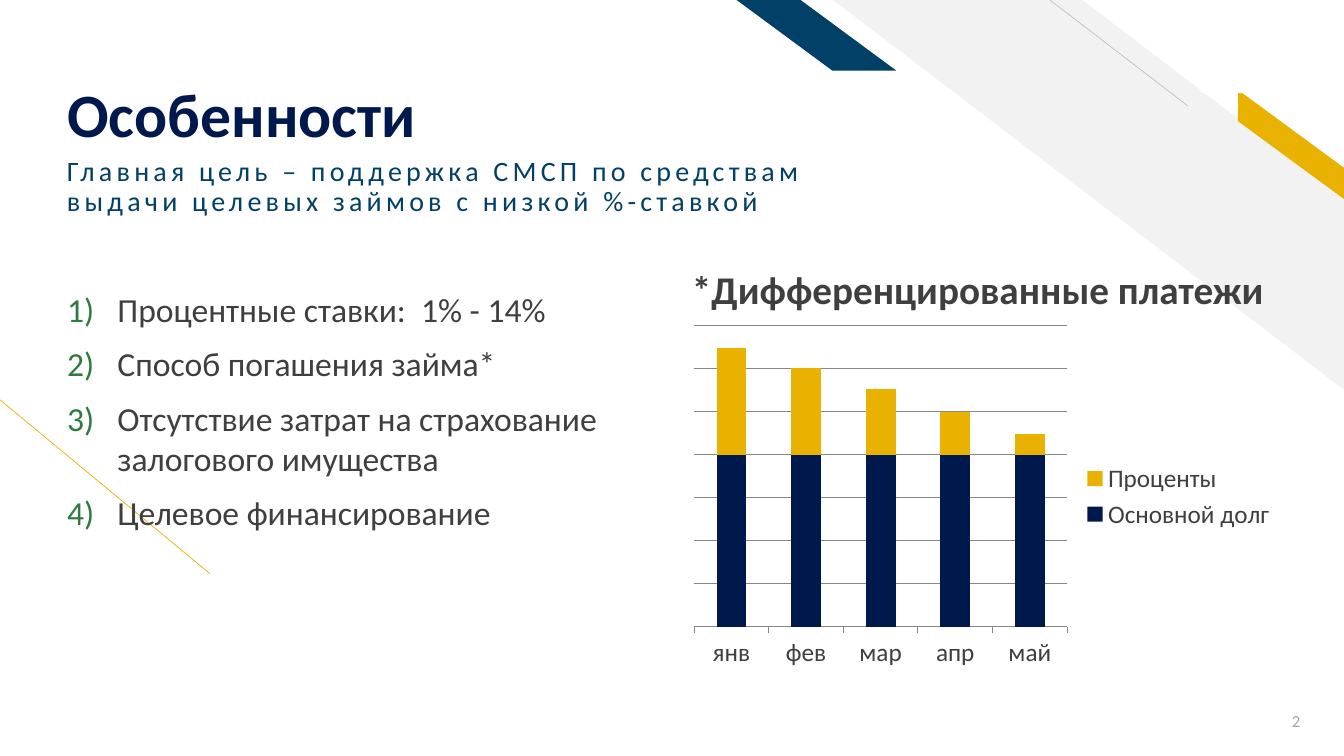
from lxml import etree
from pptx import Presentation
from pptx.chart.data import CategoryChartData
from pptx.dml.color import RGBColor
from pptx.enum.chart import XL_CHART_TYPE, XL_LEGEND_POSITION, XL_TICK_LABEL_POSITION, XL_TICK_MARK
from pptx.enum.shapes import MSO_CONNECTOR, MSO_SHAPE
from pptx.enum.text import MSO_ANCHOR, MSO_AUTO_SIZE, PP_ALIGN
from pptx.oxml.ns import qn
from pptx.util import Inches, Pt

STACKED = XL_CHART_TYPE.COLUMN_STACKED
LEGEND_RIGHT = XL_LEGEND_POSITION.RIGHT
NO_LABELS = XL_TICK_LABEL_POSITION.NONE
TICK_OUTSIDE = XL_TICK_MARK.OUTSIDE
STRAIGHT = MSO_CONNECTOR.STRAIGHT
STRIPE = MSO_SHAPE.DIAGONAL_STRIPE
PARALLELOGRAM = MSO_SHAPE.PARALLELOGRAM
RECTANGLE = MSO_SHAPE.RECTANGLE
TOP, MIDDLE, BOTTOM = MSO_ANCHOR.TOP, MSO_ANCHOR.MIDDLE, MSO_ANCHOR.BOTTOM
LEFT, RIGHT = PP_ALIGN.LEFT, PP_ALIGN.RIGHT

NAVY = RGBColor(0x00, 0x19, 0x4C)
BLUE = RGBColor(0x01, 0x40, 0x67)
GOLD = RGBColor(0xEA, 0xB2, 0x00)
GREEN = RGBColor(0x2E, 0x7A, 0x40)
TEXT = RGBColor(0x3F, 0x3F, 0x3F)
PALE = RGBColor(0xF2, 0xF2, 0xF2)
SILVER = RGBColor(0xBF, 0xBF, 0xBF)
GREY = RGBColor(0xA5, 0xA5, 0xA5)
GRID = RGBColor(0x87, 0x87, 0x87)
WHITE = RGBColor(0xFF, 0xFF, 0xFF)

COLUMNS, ROWS = 160, 90
CELL = Inches(1 / 12)
LEFT_COLUMN, RIGHT_COLUMN, BODY_WIDTH = 6.8, 81.2, 71.9


def cells(*counts):
    return [round(count * CELL) for count in counts]


def write(shape, lines, size, color, bold=False, anchor=TOP, align=LEFT, spacing=1.0, before=0):
    frame = shape.text_frame
    frame.word_wrap = True
    frame.auto_size = MSO_AUTO_SIZE.NONE
    frame.vertical_anchor = anchor
    for index, line in enumerate(lines):
        paragraph = frame.add_paragraph() if index else frame.paragraphs[0]
        paragraph.alignment = align
        paragraph.line_spacing = spacing
        paragraph.space_before = Pt(before)
        run = paragraph.add_run()
        run.text = line
        run.font.name = "Calibri"
        run.font.size = Pt(size)
        run.font.bold = bold
        run.font.color.rgb = color
    return frame


presentation = Presentation()
presentation.slide_width, presentation.slide_height = cells(COLUMNS, ROWS)
slide = presentation.slides.add_slide(presentation.slide_layouts[5])
shapes = slide.shapes

decorations = [
    (STRIPE, (99.2, 0, 60.8, 46.4), [0.512], 0, PALE),
    (PARALLELOGRAM, (144.8, 15.7, 17.8, 3), [0.72], 36.3, GOLD),
    (PARALLELOGRAM, (87.7, 0, 19, 8.4), [1.356], 0, BLUE),
    (RECTANGLE, (143, 2.6, 17, 8.5), [], 0, WHITE),
]
for kind, box, slants, rotation, color in decorations:
    shape = shapes.add_shape(kind, *cells(*box))
    for index, slant in enumerate(slants):
        shape.adjustments[index] = slant
    shape.rotation = rotation
    shape.element.spPr.find(qn("a:xfrm")).set("flipH", "1")
    shape.shadow.inherit = False
    shape.fill.solid()
    shape.fill.fore_color.rgb = color
    shape.line.fill.background()

for ends, color in [((25, 68.3, 0, 47.6), GOLD), ((141.4, 12.6, 125, 0), SILVER)]:
    line = shapes.add_connector(STRAIGHT, *cells(*ends))
    line.line.color.rgb = color
    line.line.width = Pt(0.5)
    etree.SubElement(line.element.spPr, qn("a:effectLst"))

title = shapes.title
title.left, title.top, title.width, title.height = cells(LEFT_COLUMN, 2.8, 109.3, 15.1)
title_frame = write(title, ["Особенности"], 44, NAVY, bold=True, anchor=BOTTOM, spacing=0.9)
title_frame.margin_bottom = 0

subtitle = shapes.add_textbox(*cells(LEFT_COLUMN, 18.1, 96.7, 8))
subtitle_frame = write(
    subtitle,
    ["Главная цель – поддержка СМСП по средствам выдачи целевых займов с низкой %-ставкой"],
    20, BLUE, spacing=0.9, before=10)
subtitle_frame.paragraphs[0].runs[0].font._element.set("spc", "300")

features = shapes.add_textbox(*cells(LEFT_COLUMN, 33.8, BODY_WIDTH, 46.4))
feature_frame = write(features, [
    "Процентные ставки:  1% - 14%",
    "Способ погашения займа*",
    "Отсутствие затрат на страхование залогового имущества",
    "Целевое финансирование",
], 24, TEXT, before=10)
for paragraph in feature_frame.paragraphs:
    properties = paragraph._p.get_or_add_pPr()
    properties.set("marL", str(Inches(0.5)))
    properties.set("indent", str(-Inches(0.5)))
    bullet_color = etree.SubElement(properties, qn("a:buClr"))
    etree.SubElement(bullet_color, qn("a:srgbClr"), val=str(GREEN))
    etree.SubElement(properties, qn("a:buFont"), typeface="+mj-lt")
    etree.SubElement(properties, qn("a:buAutoNum"), type="arabicParenR")

heading = shapes.add_textbox(*cells(RIGHT_COLUMN, 27.6, BODY_WIDTH, 10.2))
write(heading, ["*Дифференцированные платежи"], 28, TEXT, bold=True, anchor=BOTTOM, before=10)

payments = CategoryChartData()
payments.categories = ["янв", "фев", "мар", "апр", "май"]
payments.add_series("Основной долг", [100] * 5)
payments.add_series("Проценты", [62, 50, 38, 25, 12])
chart = shapes.add_chart(STACKED, *cells(RIGHT_COLUMN, 37.9, BODY_WIDTH, 42.4), payments).chart
chart.has_title = False
chart.font.name = "Calibri"
chart.font.size = Pt(18)
chart.font.color.rgb = TEXT
chart.has_legend = True
chart.legend.position = LEGEND_RIGHT
chart.legend.include_in_layout = False

plot = chart.plots[0]
plot.gap_width = 150
plot.overlap = 100
plot.vary_by_categories = False
for series, color in zip(plot.series, [NAVY, GOLD]):
    series.format.fill.solid()
    series.format.fill.fore_color.rgb = color

value_axis = chart.value_axis
value_axis.minimum_scale, value_axis.maximum_scale = 0, 175
value_axis.major_unit = 25
value_axis.tick_label_position = NO_LABELS
value_axis.visible = False
value_axis.has_major_gridlines = True
category_axis = chart.category_axis
category_axis.major_tick_mark = TICK_OUTSIDE
for axis_line in (value_axis.major_gridlines.format.line, category_axis.format.line):
    axis_line.color.rgb = GRID
    axis_line.width = Pt(0.75)

page_number = shapes.add_textbox(*cells(146.3, 83.4, 9.7, 4.8))
write(page_number, ["2"], 12, GREY, anchor=MIDDLE, align=RIGHT)

presentation.save("out.pptx")
